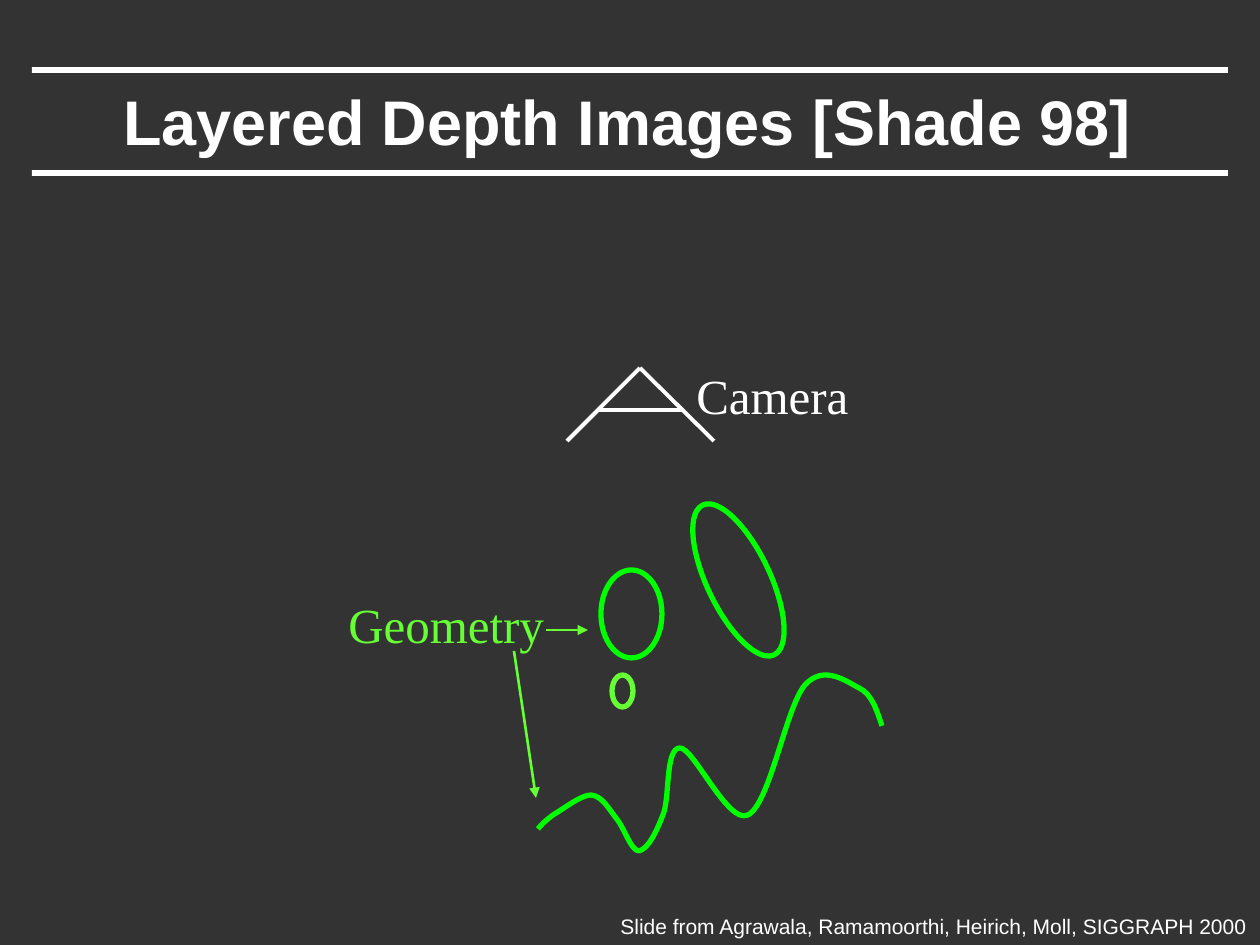
from dataclasses import dataclass

from lxml import etree
from pptx import Presentation
from pptx.dml.color import RGBColor
from pptx.enum.shapes import MSO_CONNECTOR, MSO_SHAPE
from pptx.enum.text import MSO_ANCHOR, MSO_AUTO_SIZE, PP_ALIGN
from pptx.oxml.ns import qn
from pptx.util import Pt

EMU_PER_PX = 914400 / 126
RECTANGLE, OVAL = MSO_SHAPE.RECTANGLE, MSO_SHAPE.OVAL
STRAIGHT = MSO_CONNECTOR.STRAIGHT
MIDDLE, TOP = MSO_ANCHOR.MIDDLE, MSO_ANCHOR.TOP
CENTER, LEFT = PP_ALIGN.CENTER, PP_ALIGN.LEFT
FIT_SHAPE, FIXED_SIZE = MSO_AUTO_SIZE.SHAPE_TO_FIT_TEXT, MSO_AUTO_SIZE.NONE


@dataclass(frozen=True)
class Theme:
    background: RGBColor = RGBColor(0x33, 0x33, 0x33)
    white: RGBColor = RGBColor(0xFF, 0xFF, 0xFF)
    green: RGBColor = RGBColor(0x00, 0xFF, 0x00)
    lime: RGBColor = RGBColor(0x66, 0xFF, 0x33)
    sans: str = "Arial"
    serif: str = "Times New Roman"
    title_size: int = 36
    label_size: int = 28
    credit_size: int = 12
    outline_width: float = 3
    camera_width: float = 2.25
    arrow_width: float = 1.5


THEME = Theme()

TERRAIN_START = (538, 829)
TERRAIN_CURVES = [
    [(541, 825), (544, 822), (553, 815)],
    [(562, 810), (581, 795), (591, 795)],
    [(602, 796), (609, 809), (616, 818)],
    [(624, 827), (631, 851), (639, 851)],
    [(648, 849), (656, 833), (663, 815)],
    [(670, 799), (665, 748), (680, 748)],
    [(694, 748), (728, 825), (748, 815)],
    [(770, 804), (786, 707), (805, 685)],
    [(824, 664), (847, 682), (859, 688)],
    [(872, 694), (877, 711), (882, 726)],
]


def px(*lengths):
    return [round(length * EMU_PER_PX) for length in lengths]


def add_bar(slide, box):
    shape = slide.shapes.add_shape(RECTANGLE, *px(*box))
    shape.shadow.inherit = False
    shape.fill.solid()
    shape.fill.fore_color.rgb = THEME.white
    shape.line.fill.background()


def style_outline(shape, color):
    shape.shadow.inherit = False
    shape.fill.background()
    shape.line.color.rgb = color
    shape.line.width = Pt(THEME.outline_width)


def add_oval(slide, box, color, rotation=0):
    shape = slide.shapes.add_shape(OVAL, *px(*box))
    shape.rotation = rotation
    style_outline(shape, color)


def add_curve(slide, start, curves, color):
    builder = slide.shapes.build_freeform(*start, scale=EMU_PER_PX)
    builder.add_line_segments([point for curve in curves for point in curve], close=False)
    shape = builder.convert_to_shape()
    segments = list(shape._element.iter(qn("a:lnTo")))
    for index in range(0, len(segments), 3):
        bezier = etree.Element(qn("a:cubicBezTo"))
        segments[index].addprevious(bezier)
        for segment in segments[index:index + 3]:
            bezier.append(segment[0])
            segment.getparent().remove(segment)
    style_outline(shape, color)


def add_line(slide, start, end, color, width, arrow=False):
    connector = slide.shapes.add_connector(STRAIGHT, *px(*start, *end))
    connector.line.color.rgb = color
    connector.line.width = Pt(width)
    if arrow:
        line = connector.line._get_or_add_ln()
        etree.SubElement(line, qn("a:tailEnd"), type="triangle")
    etree.SubElement(connector._element.spPr, qn("a:effectLst"))


def add_text(slide, box, text, font, size, color):
    shape = slide.shapes.add_textbox(*px(*box))
    frame = shape.text_frame
    frame.word_wrap = False
    frame.auto_size = FIT_SHAPE
    frame.vertical_anchor = TOP
    frame.margin_right = 0
    paragraph = frame.paragraphs[0]
    paragraph.text = text
    paragraph.alignment = LEFT
    paragraph.font.name = font
    paragraph.font.size = Pt(size)
    paragraph.font.color.rgb = color
    return shape


def add_title(slide, box, text):
    shape = add_text(slide, box, text, THEME.sans, THEME.title_size, THEME.white)
    frame = shape.text_frame
    frame.word_wrap = True
    frame.auto_size = FIXED_SIZE
    frame.vertical_anchor = MIDDLE
    frame.paragraphs[0].alignment = CENTER
    frame.paragraphs[0].font.bold = True


def add_camera(slide):
    apex, left_foot, right_foot = (640, 368), (567, 441), (714, 441)
    for start, end in [(left_foot, apex), (apex, right_foot), ((599, 410), (683, 410))]:
        add_line(slide, start, end, THEME.white, THEME.camera_width)
    add_text(slide, (684, 359, 166, 72), "Camera", THEME.serif, THEME.label_size, THEME.white)


def add_geometry(slide):
    add_curve(slide, TERRAIN_START, TERRAIN_CURVES, THEME.green)
    add_oval(slide, (601, 570, 61, 88), THEME.green)
    add_oval(slide, (707, 497, 63, 166), THEME.green, 334.5)
    add_oval(slide, (612, 675, 21, 32), THEME.lime)
    add_text(slide, (336, 588, 210, 72), "Geometry", THEME.serif, THEME.label_size, THEME.lime)
    for start, end in [((546, 630), (588, 630)), ((514, 651), (536, 798))]:
        add_line(slide, start, end, THEME.lime, THEME.arrow_width, arrow=True)


def main():
    presentation = Presentation()
    presentation.slide_width, presentation.slide_height = px(1260, 945)
    slide = presentation.slides.add_slide(presentation.slide_layouts[6])
    slide.background.fill.solid()
    slide.background.fill.fore_color.rgb = THEME.background

    for top in (170, 67):
        add_bar(slide, (32, top, 1196, 6))
    add_title(slide, (93, 73, 1056, 94), "Layered Depth Images [Shade 98]")
    add_geometry(slide)
    add_camera(slide)
    add_text(
        slide, (608, 907, 644, 38),
        "Slide from Agrawala, Ramamoorthi, Heirich, Moll, SIGGRAPH 2000",
        THEME.sans, THEME.credit_size, THEME.white,
    )
    presentation.save("out.pptx")


if __name__ == "__main__":
    main()
